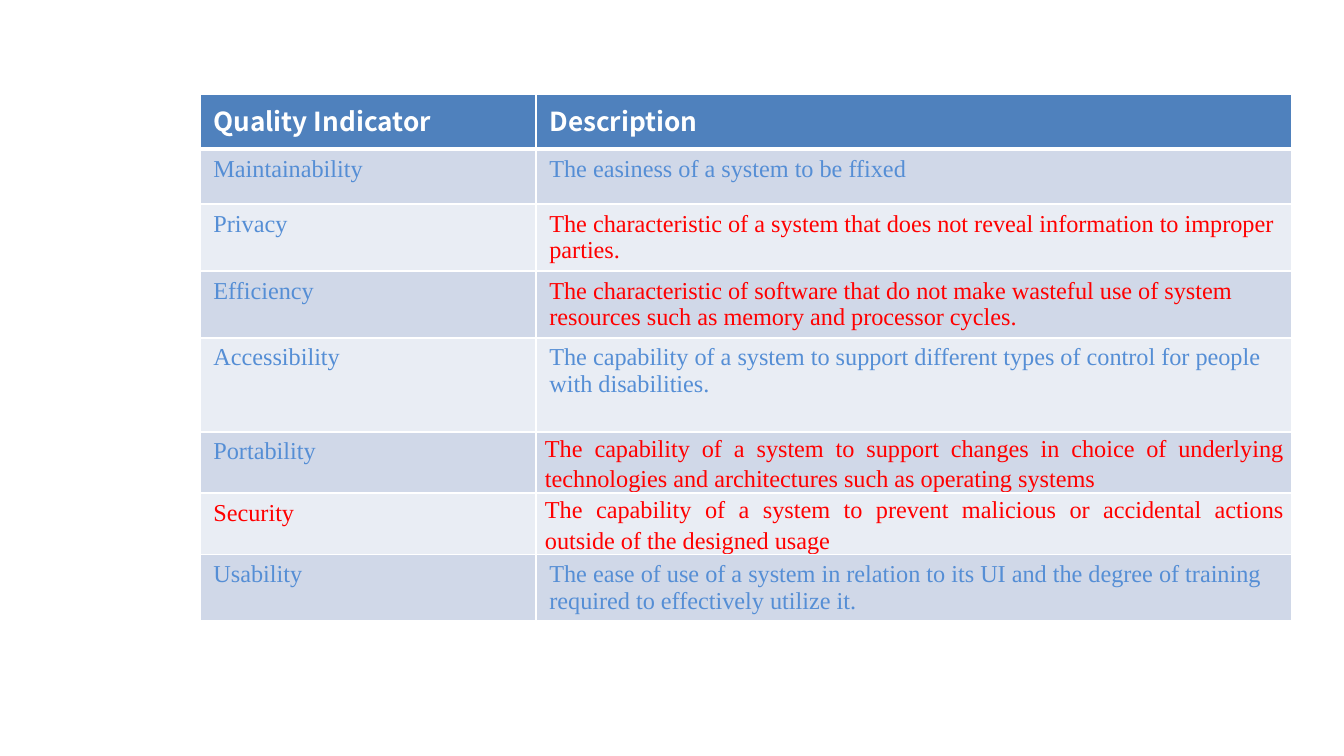
from typing import NamedTuple

from lxml import etree
from pptx import Presentation
from pptx.dml.color import RGBColor
from pptx.enum.text import PP_ALIGN
from pptx.oxml.ns import qn
from pptx.util import Emu, Pt

PX = 6804  # EMU per px
JUSTIFY = PP_ALIGN.JUSTIFY
COLORS = {
    "white": "FFFFFF",
    "header": "4F81BD",
    "odd": "D0D8E8",
    "even": "E9EDF4",
    "blue": "558ED5",
    "red": "FF0000",
}
HEADER_FONT, BODY_FONT = "Noto Sans CJK KR", "Times New Roman"
COLUMN_WIDTHS = (336, 756)
HEADER_HEIGHT = 55
TABLE_LEFT, TABLE_TOP = 200, 94


class Indicator(NamedTuple):
    name: str
    description: str
    height: int
    name_color: str = "blue"
    description_color: str = "blue"
    justified: bool = False


INDICATORS = (
    Indicator("Maintainability", "The easiness of a system to be ffixed", 55),
    Indicator("Privacy", "The characteristic of a system that does not reveal "
              "information to improper parties.", 67, description_color="red"),
    Indicator("Efficiency", "The characteristic of software that do not make wasteful use "
              "of system resources such as memory and processor cycles.", 66,
              description_color="red"),
    Indicator("Accessibility", "The capability of a system to support different types of "
              "control for people with disabilities.", 94),
    Indicator("Portability", "The capability of a system to support changes in choice of "
              "underlying technologies and architectures such as operating systems", 61,
              description_color="red", justified=True),
    Indicator("Security", "The capability of a system to prevent malicious or accidental "
              "actions outside of the designed usage", 61, "red", "red", True),
    Indicator("Usability", "The ease of use of a system in relation to its UI and the "
              "degree of training required to effectively utilize it.", 66),
)


def px(length: int) -> Emu:
    return Emu(length * PX)


def rgb(color: str) -> RGBColor:
    return RGBColor.from_string(COLORS[color])


def set_borders(cell, top: int, bottom: int) -> None:
    """Draw white borders, 1 pt at the sides and the given points above and below."""
    properties = cell._tc.get_or_add_tcPr()
    widths = {"a:lnL": 1, "a:lnR": 1, "a:lnT": top, "a:lnB": bottom}
    for position, (tag, width) in enumerate(widths.items()):
        line = etree.Element(qn(tag), w=str(Pt(width)))
        fill = etree.SubElement(line, qn("a:solidFill"))
        etree.SubElement(fill, qn("a:srgbClr"), val=COLORS["white"])
        properties.insert(position, line)


def write_cell(cell, text: str, color: str, fill: str, header: bool = False,
               justified: bool = False):
    cell.fill.solid()
    cell.fill.fore_color.rgb = rgb(fill)
    paragraph = cell.text_frame.paragraphs[0]
    if justified:
        cell.margin_left = cell.margin_right = px(9)
        cell.margin_top = cell.margin_bottom = 0
        paragraph.alignment = JUSTIFY
        paragraph.line_spacing = 1.15
    run = paragraph.add_run()
    run.text = text
    run.font.name = HEADER_FONT if header else BODY_FONT
    run.font.size = Pt(14 if header else 13)
    run.font.bold = header
    run.font.color.rgb = rgb(color)


def add_indicator_table(slide) -> None:
    heights = [HEADER_HEIGHT, *(indicator.height for indicator in INDICATORS)]
    table = slide.shapes.add_table(
        len(heights), len(COLUMN_WIDTHS), px(TABLE_LEFT), px(TABLE_TOP),
        px(sum(COLUMN_WIDTHS)), px(sum(heights))).table
    for column, width in zip(table.columns, COLUMN_WIDTHS):
        column.width = px(width)
    for row, height in zip(table.rows, heights):
        row.height = px(height)

    for column, heading in enumerate(("Quality Indicator", "Description")):
        cell = table.cell(0, column)
        write_cell(cell, heading, "white", "header", header=True)
        set_borders(cell, top=1, bottom=3)

    for row, indicator in enumerate(INDICATORS, start=1):
        band = "odd" if row % 2 else "even"
        name_cell, description_cell = table.cell(row, 0), table.cell(row, 1)
        write_cell(name_cell, indicator.name, indicator.name_color, band)
        write_cell(description_cell, indicator.description, indicator.description_color,
                   band, justified=indicator.justified)
        for cell in (name_cell, description_cell):
            set_borders(cell, top=3 if row == 1 else 1, bottom=1)


def main() -> None:
    presentation = Presentation()
    presentation.slide_width, presentation.slide_height = px(1344), px(756)
    slide = presentation.slides.add_slide(presentation.slide_layouts[6])
    add_indicator_table(slide)
    presentation.save("out.pptx")


if __name__ == "__main__":
    main()
